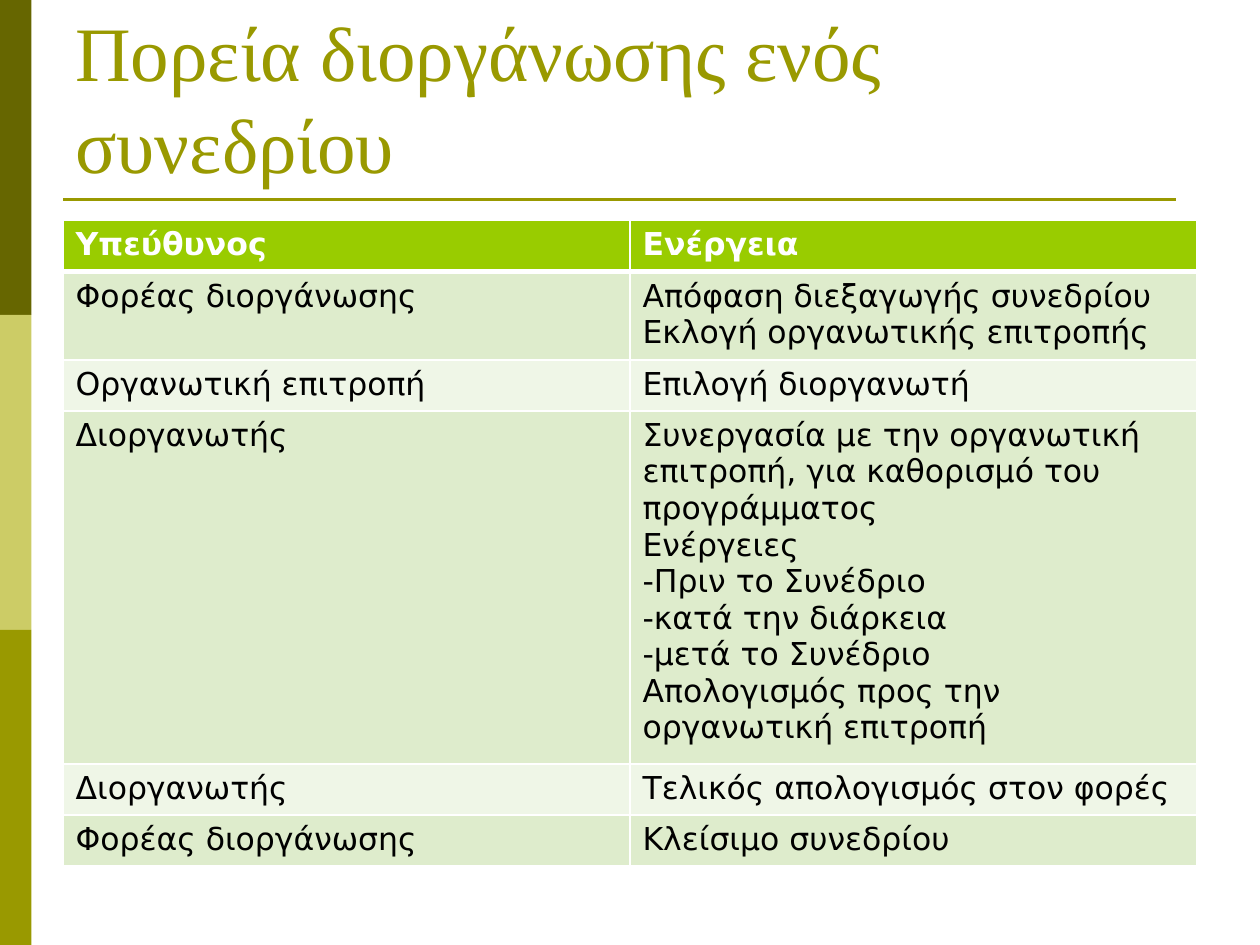
"""Build the slide on the steps of organising a conference."""
from lxml.etree import SubElement
from pptx import Presentation
from pptx.dml.color import RGBColor as Rgb
from pptx.enum.shapes import MSO_CONNECTOR as Conn, MSO_SHAPE as Shape
from pptx.enum.text import MSO_ANCHOR as Anchor
from pptx.oxml.ns import qn
from pptx.util import Pt

TITLE = "Πορεία διοργάνωσης ενός συνεδρίου"
ROWS = [
    ("Υπεύθυνος", ["Ενέργεια"]),
    ("Φορέας διοργάνωσης", ["Απόφαση διεξαγωγής συνεδρίου", "Εκλογή οργανωτικής επιτροπής"]),
    ("Οργανωτική επιτροπή", ["Επιλογή διοργανωτή"]),
    ("Διοργανωτής", [
        "Συνεργασία με την οργανωτική επιτροπή, για καθορισμό του προγράμματος",
        "Ενέργειες",
        "-Πριν το Συνέδριο",
        "-κατά την διάρκεια",
        "-μετά το Συνέδριο",
        "Απολογισμός προς την οργανωτική επιτροπή",
    ]),
    ("Διοργανωτής", ["Τελικός απολογισμός στον φορές"]),
    ("Φορέας διοργάνωσης", ["Κλείσιμο συνεδρίου"]),
]
THEME = {
    "bars": ["666600", "CCCC66", "999900"],
    "title": ("Times New Roman", 44, "999900"),
    "head": ("DejaVu Sans", 18, "FFFFFF"),
    "body": ("DejaVu Sans", 18, "000000"),
    "rule": "999900",
    "top": "99CC00",
    "bands": ["EFF6E7", "DEECCC"],
    "grid": "FFFFFF",
}
WIDE, HIGH = 720, 540
LEFT, SPAN, ROW = 36, 648, 29.2


def paint(fill, color):
    """Give a fill one solid colour."""
    fill.solid()
    fill.fore_color.rgb = Rgb.from_string(color)


def style(frame, key, bold=False):
    """Set the font of every run in a text frame."""
    name, size, color = THEME[key]
    for para in frame.paragraphs:
        for run in para.runs:
            font = run.font
            font.name, font.size, font.bold = name, Pt(size), bold
            font.color.rgb = Rgb.from_string(color)


def edge(cell, sides):
    """Draw the cell borders, given as side and width pairs."""
    props = cell._tc.get_or_add_tcPr()
    for spot, (side, width) in enumerate(sides.items()):
        line = SubElement(props, qn(f"a:ln{side}"), w=str(Pt(width)))
        solid = SubElement(line, qn("a:solidFill"))
        SubElement(solid, qn("a:srgbClr"), val=THEME["grid"])
        props.insert(spot, line)


def add_frame(slide):
    """Add the side bars and the rule below the title."""
    step = HIGH / len(THEME["bars"])
    for i, color in enumerate(THEME["bars"]):
        bar = slide.shapes.add_shape(Shape.RECTANGLE, 0, Pt(i * step), Pt(18), Pt(step))
        bar.shadow.inherit = False
        paint(bar.fill, color)
        bar.line.fill.background()
    rule = slide.shapes.add_connector(Conn.STRAIGHT, Pt(LEFT), Pt(114), Pt(672), Pt(114))
    rule.line.width = Pt(1.5)
    rule.line.color.rgb = Rgb.from_string(THEME["rule"])
    SubElement(rule._element.spPr, qn("a:effectLst"))


def add_title(slide):
    """Add the title, resting on the bottom of its box."""
    frame = slide.shapes.add_textbox(Pt(LEFT), Pt(21.6), Pt(SPAN), Pt(90)).text_frame
    frame.word_wrap = True
    frame.vertical_anchor = Anchor.BOTTOM
    frame.text = TITLE
    style(frame, "title")


def add_grid(slide):
    """Add the banded table of who does what."""
    count = len(ROWS)
    table = slide.shapes.add_table(
        count, 2, Pt(LEFT), Pt(126), Pt(SPAN), Pt(ROW * count)).table
    for r, (who, acts) in enumerate(ROWS):
        head = r == 0
        for c, text in enumerate((who, "\n".join(acts))):
            cell = table.cell(r, c)
            cell.text_frame.text = text
            style(cell.text_frame, "head" if head else "body", head)
            paint(cell.fill, THEME["top"] if head else THEME["bands"][r % 2])
            edge(cell, {"L": 1, "R": 1, "T": 3 if r == 1 else 1, "B": 3 if head else 1})


def main():
    """Build and save the slide."""
    deck = Presentation()
    deck.slide_width, deck.slide_height = Pt(WIDE), Pt(HIGH)
    slide = deck.slides.add_slide(deck.slide_layouts[6])
    add_frame(slide)
    add_title(slide)
    add_grid(slide)
    deck.save("out.pptx")


if __name__ == "__main__":
    main()
